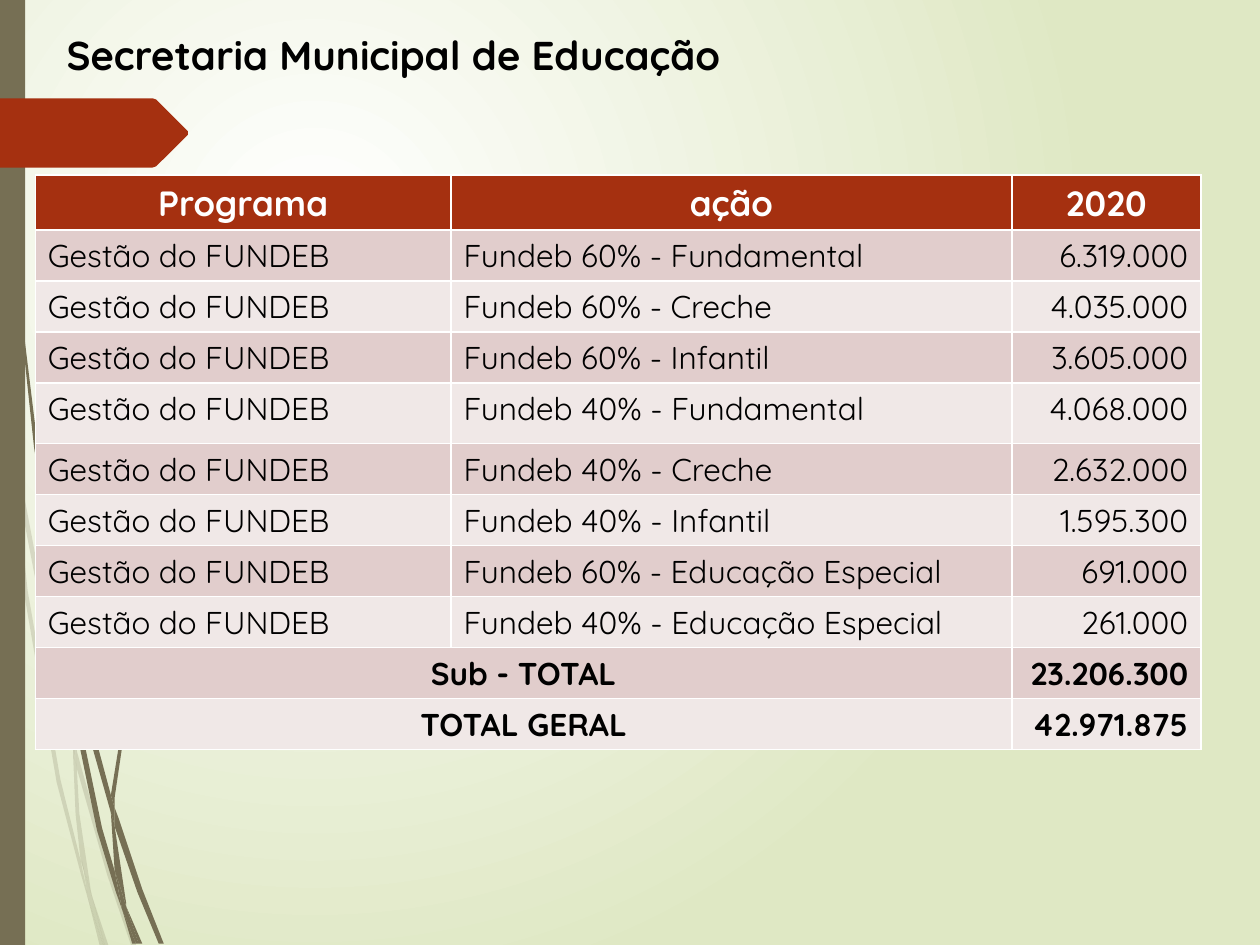
from lxml.etree import SubElement
from pptx import Presentation
from pptx.dml.color import RGBColor
from pptx.enum.shapes import MSO_SHAPE
from pptx.enum.text import PP_ALIGN
from pptx.oxml.ns import qn
from pptx.util import Inches, Pt

FONT = "Quicksand"
WHITE = RGBColor(0xFF, 0xFF, 0xFF)
BLACK = RGBColor(0, 0, 0)
PALE_GREEN = RGBColor(0xDF, 0xE8, 0xC4)
OLIVE = RGBColor(0x76, 0x6F, 0x54)
RUST = RGBColor(0xA5, 0x30, 0x10)
BANDS = (RGBColor(0xE1, 0xCD, 0xCC), RGBColor(0xF0, 0xE8, 0xE7))

# Outlines in inches on the slide
PALE_STRANDS = [
    [(0.08, 3.5), (0.06, 3.22), (0, 2.82), (0, 2.99), (0.07, 3.44)],
    [(0.4, 5.22), (0.59, 5.99), (0.59, 5.86), (0.43, 5.2), (0.1, 3.45),
     (0.12, 3.76)],
    [(0.64, 6.07), (0.61, 5.96), (0.61, 6.1), (0.85, 6.94), (1.04, 7.5),
     (1.08, 7.5), (0.88, 6.92)],
    [(0.83, 7.5), (0.86, 7.5), (0.73, 7.11)],
    [(0.64, 6.83), (0.48, 6.19), (0.22, 4.69), (0.12, 3.76), (0.08, 3.5),
     (0.19, 4.7), (0.45, 6.21), (0.64, 6.93), (0.7, 7.14), (0.69, 7.07)],
    [(0.58, 5.99), (0.6, 6.46), (0.64, 6.83), (0.67, 6.92), (0.73, 7.11),
     (0.72, 7.06), (0.63, 6.46), (0.61, 6.1), (0.61, 6.08)],
    [(0.61, 5.84), (0.76, 4.62), (1.11, 3.49), (1.59, 2.45), (1.87, 1.98),
     (2.01, 1.75), (2.17, 1.54), (2.17, 1.53), (2.01, 1.75), (1.86, 1.97),
     (1.58, 2.44), (1.1, 3.48), (0.75, 4.61), (0.59, 5.84), (0.61, 5.96)],
    [(0.7, 7.14), (0.79, 7.5), (0.82, 7.5)],
    [(0.61, 6.08), (0.61, 5.96), (0.59, 5.86), (0.58, 5.99)],
    [(0.67, 6.92), (0.65, 6.83), (0.69, 7.07), (0.7, 7.14), (0.82, 7.5),
     (0.83, 7.5), (0.73, 7.11)],
]
DARK_STRANDS = [
    [(0.05, 1.1), (0.14, 2.33), (0.27, 3.55), (0.46, 4.77), (0.47, 4.81),
     (0.45, 4.57), (0.45, 4.53), (0.3, 3.55), (0.15, 2.32), (0.06, 1.09),
     (0.04, 0.48), (0.03, 0), (0.02, 0), (0.03, 0.48)],
    [(0.73, 5.92), (0.88, 6.45), (0.88, 6.31), (0.77, 5.9), (0.5, 4.72),
     (0.53, 5.05)],
    [(0.94, 6.49), (0.91, 6.41), (0.91, 6.56), (1.09, 7.08), (1.26, 7.49),
     (1.3, 7.49), (1.13, 7.06)],
    [(0.91, 6.91), (0.81, 6.57), (0.6, 5.56), (0.53, 5.05), (0.47, 4.77),
     (0.56, 5.57), (0.77, 6.59), (0.92, 7.08), (0.97, 7.22), (0.96, 7.17)],
    [(0.5, 4.72), (0.48, 4.53), (0.44, 3.49), (0.48, 2.45), (0.52, 1.93),
     (0.58, 1.41), (0.51, 1.93), (0.47, 2.45), (0.43, 3.49), (0.45, 4.49),
     (0.49, 4.72)],
    [(1.1, 7.49), (1.13, 7.49), (1, 7.19)],
    [(0.47, 4.77), (0.53, 5.05), (0.5, 4.72), (0.49, 4.72), (0.45, 4.49),
     (0.45, 4.53)],
    [(0.91, 6.33), (1.03, 5.52), (1.31, 4.76), (1.69, 4.06), (1.91, 3.74),
     (2.03, 3.59), (2.16, 3.44), (2.15, 3.44), (2.03, 3.58), (1.91, 3.73),
     (1.68, 4.05), (1.29, 4.74), (1.01, 5.51), (0.88, 6.31), (0.91, 6.41)],
    [(0.97, 7.22), (1.05, 7.49), (1.08, 7.49)],
    [(0.88, 6.45), (0.91, 6.91), (0.96, 7.06), (1, 7.19), (1, 7.16),
     (0.91, 6.56), (0.9, 6.51)],
    [(0.88, 6.45), (0.9, 6.51), (0.91, 6.56), (0.91, 6.41), (0.88, 6.31)],
    [(0.96, 7.06), (0.91, 6.91), (0.96, 7.17), (0.97, 7.22), (1.08, 7.49),
     (1.1, 7.49), (1, 7.19)],
]
ARROW = [(0, 0.78), (1.21, 0.78), (1.24, 0.79), (1.49, 1.04), (1.49, 1.07),
         (1.24, 1.32), (1.21, 1.33), (0, 1.33)]

COLUMN_WIDTHS = (3.3, 4.45, 1.5)
HEADERS = ("Programa", "ação", "2020")
PROGRAM = "Gestão do FUNDEB"
ACTIONS = [
    ("Fundeb 60% - Fundamental", "6.319.000"),
    ("Fundeb 60% - Creche", "4.035.000"),
    ("Fundeb 60% - Infantil", "3.605.000"),
    ("Fundeb 40% - Fundamental", "4.068.000"),
    ("Fundeb 40% - Creche", "2.632.000"),
    ("Fundeb 40% - Infantil", "1.595.300"),
    ("Fundeb 60% - Educação Especial", "691.000"),
    ("Fundeb 40% - Educação Especial", "261.000"),
]
TOTALS = [("Sub - TOTAL", "23.206.300"), ("TOTAL GERAL", "42.971.875")]
TALL_ROW = 4


def paint_background(page):
    """Radial gradient, white near the upper left."""
    fill = page.background.fill
    fill.gradient()
    for stop, color in zip(fill.gradient_stops, (WHITE, PALE_GREEN)):
        stop.color.rgb = color
    gradient = page.element.find(".//" + qn("a:gradFill"))
    gradient.remove(gradient.find(qn("a:lin")))
    circle = SubElement(gradient, qn("a:path"), {"path": "circle"})
    SubElement(circle, qn("a:fillToRect"),
               {"l": "50000", "t": "50000", "r": "100000", "b": "100000"})


def paint_shape(shape, color, opacity=100):
    shape.shadow.inherit = False
    shape.fill.solid()
    shape.fill.fore_color.rgb = color
    shape.line.fill.background()
    if opacity < 100:
        rgb = shape.element.spPr.find(".//" + qn("a:srgbClr"))
        SubElement(rgb, qn("a:alpha"), {"val": str(opacity * 1000)})


def add_outline(shapes, points, color, opacity=100):
    start, *others = [(Inches(x), Inches(y)) for x, y in points]
    builder = shapes.build_freeform(*start)
    builder.add_line_segments(others, close=True)
    paint_shape(builder.convert_to_shape(), color, opacity)


def add_strands(page, strands, opacity):
    group = page.shapes.add_group_shape()
    for points in strands:
        add_outline(group.shapes, points, OLIVE, opacity)


def add_span(para, text, size, color, bold):
    span = para.add_run()
    span.text = text
    span.font.name = FONT
    span.font.size = Pt(size)
    span.font.color.rgb = color
    span.font.bold = bold


def add_title(page, text):
    box = page.shapes.add_textbox(Inches(0.43), Inches(0.19), Inches(8.44), Inches(0.49))
    box.text_frame.word_wrap = True
    add_span(box.text_frame.paragraphs[0], text, 23, BLACK, True)


def fill_cell(cell, text, align, fill, size=18, color=BLACK, bold=False):
    cell.fill.solid()
    cell.fill.fore_color.rgb = fill
    para = cell.text_frame.paragraphs[0]
    para.alignment = align
    add_span(para, text, size, color, bold)


def add_budget_table(page):
    row_count = 1 + len(ACTIONS) + len(TOTALS)
    frame = page.shapes.add_table(row_count, len(HEADERS), Inches(0.28), Inches(1.39),
                                  Inches(sum(COLUMN_WIDTHS)), Inches(4.46))
    table = frame.table
    for column, width in zip(table.columns, COLUMN_WIDTHS):
        column.width = Inches(width)
    table.rows[TALL_ROW].height = Inches(0.48)

    for column, text in enumerate(HEADERS):
        fill_cell(table.cell(0, column), text, PP_ALIGN.CENTER, RUST, 20, WHITE, True)
    for row, (label, amount) in enumerate(ACTIONS + TOTALS, start=1):
        band = BANDS[(row - 1) % 2]
        is_total = row > len(ACTIONS)
        if is_total:
            table.cell(row, 0).merge(table.cell(row, 1))
            fill_cell(table.cell(row, 0), label, PP_ALIGN.CENTER, band, bold=True)
        else:
            fill_cell(table.cell(row, 0), PROGRAM, PP_ALIGN.LEFT, band)
            fill_cell(table.cell(row, 1), label, PP_ALIGN.LEFT, band)
        fill_cell(table.cell(row, 2), amount, PP_ALIGN.RIGHT, band, bold=is_total)


def main():
    deck = Presentation()
    deck.slide_width, deck.slide_height = Inches(10), Inches(7.5)
    page = deck.slides.add_slide(deck.slide_layouts[6])
    paint_background(page)
    add_strands(page, PALE_STRANDS, 20)
    add_strands(page, DARK_STRANDS, 100)
    side_bar = page.shapes.add_shape(MSO_SHAPE.RECTANGLE, 0, 0, Inches(0.2), Inches(7.5))
    paint_shape(side_bar, OLIVE)
    add_outline(page.shapes, ARROW, RUST)
    add_title(page, "Secretaria Municipal de Educação")
    add_budget_table(page)
    deck.save("out.pptx")


if __name__ == "__main__":
    main()
